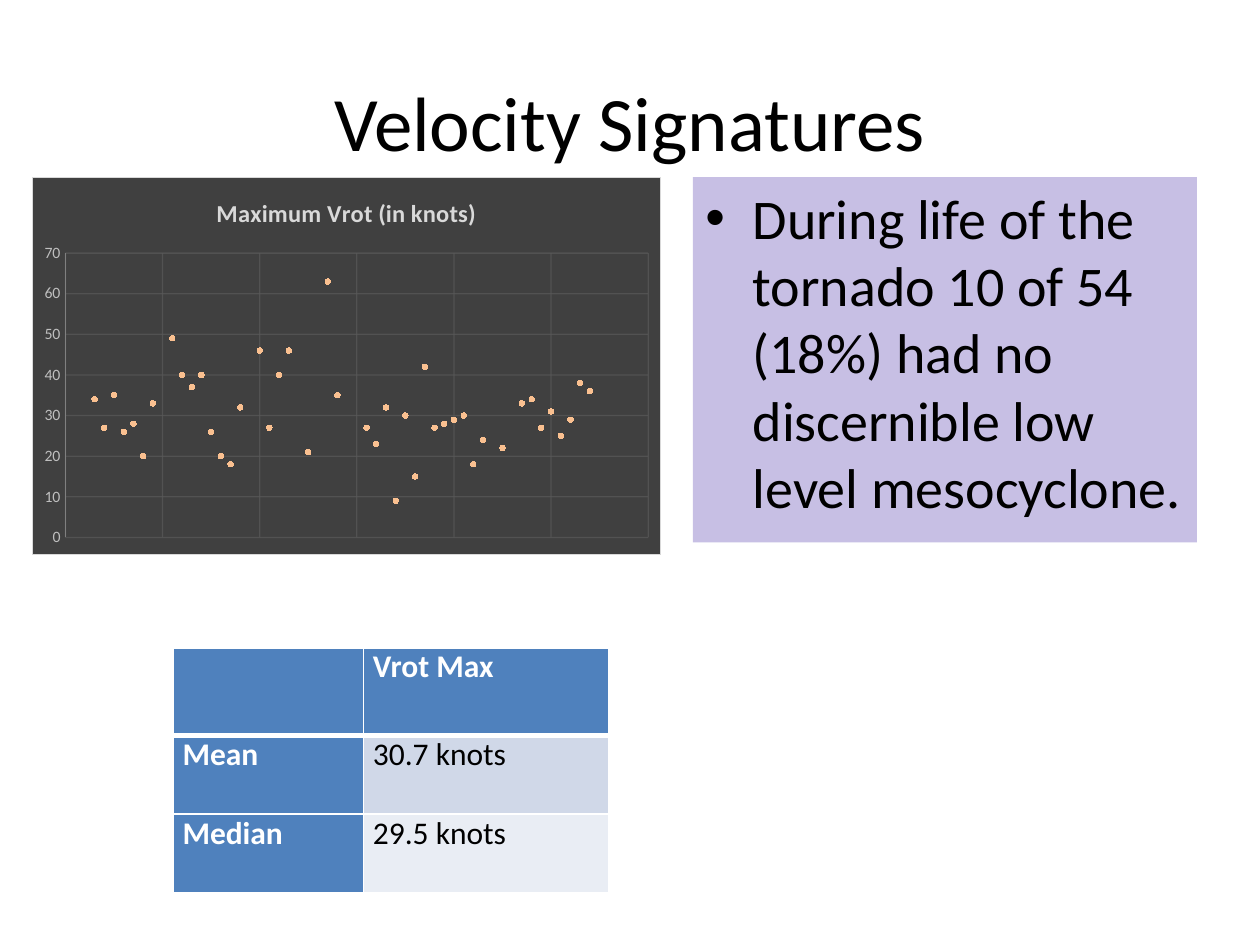
from dataclasses import dataclass

from lxml import etree
from pptx import Presentation, util as u
from pptx.chart import data
from pptx.dml import color
from pptx.enum import chart as kinds, shapes, text
from pptx.oxml import ns

Pt = u.Pt


@dataclass(frozen=True)
class Theme:
    """Colours and type sizes of the slide."""
    font: str = "Calibri"
    ink: str = "000000"
    white: str = "FFFFFF"
    note: str = "200096"
    header: str = "4F81BD"
    bands: tuple = ("D0D8E8", "E9EDF4")
    panel: str = "404040"
    panel_border: str = "D9D9D9"
    grid: str = "595959"
    axis: str = "808080"
    axis_text: str = "BFBFBF"
    marker: str = "FAC090"
    title_size: int = 44
    note_size: int = 32
    table_size: int = 18
    chart_title_size: int = 14
    chart_size: int = 10
    axis_size: int = 9


THEME = Theme()
VROT = [
    None, None, 34, 27, 35, 26, 28, 20, 33, None, 49, 40, 37, 40, 26, 20, 18, 32,
    None, 46, 27, 40, 46, None, 21, None, 63, 35, None, None, 27, 23, 32, 9, 30, 15,
    42, 27, 28, 29, 30, 18, 24, None, 22, None, 33, 34, 27, 31, 25, 29, 38, 36,
]
ROWS = [("", "Vrot Max"), ("Mean", "30.7 knots"), ("Median", "29.5 knots")]


def rgb(value):
    """Turn a hex string into a colour."""
    return color.RGBColor.from_string(value)


def add_element(parent, tag, **attributes):
    """Append an XML element with the given attributes."""
    return etree.SubElement(parent, ns.qn(tag), attributes)


def set_opacity(parent, percent):
    """Set the opacity of every RGB colour below an element."""
    for tint in parent.iter(ns.qn("a:srgbClr")):
        add_element(tint, "a:alpha", val=str(percent * 1000))


def set_font(font, size, ink, bold=False):
    """Format a font."""
    font.name, font.size, font.bold = THEME.font, Pt(size), bold
    font.color.rgb = rgb(ink)


def write(frame, words, size, ink=THEME.ink, bold=False, align=text.PP_ALIGN.LEFT,
          anchor=text.MSO_ANCHOR.TOP, bullet=None, indent=0):
    """Fill a text frame with one formatted paragraph."""
    frame.word_wrap = True
    frame.vertical_anchor = anchor
    paragraph = frame.paragraphs[0]
    paragraph.alignment = align
    if bullet:
        properties = paragraph._p.get_or_add_pPr()
        properties.set("marL", str(Pt(indent)))
        properties.set("indent", str(-Pt(indent)))
        add_element(properties, "a:buFont", typeface="Arial")
        add_element(properties, "a:buChar", char=bullet)
    run = paragraph.add_run()
    run.text = words
    set_font(run.font, size, ink, bold)


def place_title(slide, left, top, width, height):
    """Move and fill the title placeholder."""
    title = slide.shapes.title
    title.left, title.top, title.width, title.height = map(Pt, (left, top, width, height))
    write(title.text_frame, "Velocity Signatures", THEME.title_size,
          align=text.PP_ALIGN.CENTER, anchor=text.MSO_ANCHOR.MIDDLE)


def place_note(slide, left, top, width, height):
    """Place the tinted finding beside the chart."""
    note = slide.shapes.add_shape(shapes.MSO_SHAPE.RECTANGLE,
                                  *map(Pt, (left, top, width, height)))
    note.shadow.inherit = False
    note.fill.solid()
    note.fill.fore_color.rgb = rgb(THEME.note)
    set_opacity(note.element.spPr, 25)
    note.line.fill.background()
    write(note.text_frame,
          "During life of the tornado 10 of 54 (18%) had no discernible low level mesocyclone.",
          THEME.note_size, bullet="•", indent=27)


def style_panel(chart):
    """Fill the chart background and fix the plot area."""
    panel = etree.Element(ns.qn("c:spPr"))
    fill = add_element(panel, "a:solidFill")
    add_element(fill, "a:srgbClr", val=THEME.panel)
    border = add_element(panel, "a:ln", w=str(Pt(0.75)))
    add_element(add_element(border, "a:solidFill"), "a:srgbClr", val=THEME.panel_border)
    chart.element.find(ns.qn("c:txPr")).addprevious(panel)

    plot_area = chart.element.find(".//" + ns.qn("c:plotArea"))
    for old in plot_area.findall(ns.qn("c:layout")):
        plot_area.remove(old)
    layout = etree.Element(ns.qn("c:layout"))
    plot_area.insert(0, layout)
    manual = add_element(layout, "c:manualLayout")
    for tag, value in (("layoutTarget", "inner"), ("xMode", "edge"), ("yMode", "edge"),
                       ("x", "0.053"), ("y", "0.2"), ("w", "0.927"), ("h", "0.755")):
        add_element(manual, "c:" + tag, val=value)


def style_axes(chart):
    """Scale and colour both axes and their grids."""
    for axis, top in ((chart.category_axis, 60), (chart.value_axis, 70)):
        axis.minimum_scale, axis.maximum_scale, axis.major_unit = 0, top, 10
        axis.has_major_gridlines = True
        axis.major_tick_mark = axis.minor_tick_mark = kinds.XL_TICK_MARK.NONE
        grid = axis.major_gridlines.format.line
        grid.width = Pt(0.75)
        grid.color.rgb = rgb(THEME.grid)
    for grid in chart.element.iter(ns.qn("c:majorGridlines")):
        set_opacity(grid, 75)
    chart.category_axis.visible = False
    knots = chart.value_axis
    knots.format.line.width = Pt(0.75)
    knots.format.line.color.rgb = rgb(THEME.axis)
    set_font(knots.tick_labels.font, THEME.axis_size, THEME.axis_text)


def clear_missing(chart):
    """Leave tornadoes without a Vrot as blank points."""
    for point in list(chart.element.iter(ns.qn("c:pt"))):
        if point.findtext(ns.qn("c:v")) == "None":
            point.getparent().remove(point)


def place_chart(slide, left, top, width, height):
    """Place the scatter chart of maximum Vrot by tornado."""
    points = data.XyChartData()
    vrot = points.add_series("Series 1")
    for number, knots in enumerate(VROT, 1):
        vrot.add_data_point(number, knots)
    chart = slide.shapes.add_chart(kinds.XL_CHART_TYPE.XY_SCATTER,
                                   *map(Pt, (left, top, width, height)), points).chart
    clear_missing(chart)
    chart.has_legend = False
    set_font(chart.font, THEME.chart_size, THEME.ink)
    chart.has_title = True
    write(chart.chart_title.text_frame, "Maximum Vrot (in knots)", THEME.chart_title_size,
          THEME.panel_border, bold=True, align=text.PP_ALIGN.CENTER)
    style_panel(chart)
    style_axes(chart)
    plot = chart.plots[0]
    plot.vary_by_categories = False
    series = plot.series[0]
    series.format.line.fill.background()
    marker = series.marker
    marker.style, marker.size = kinds.XL_MARKER_STYLE.CIRCLE, 3
    marker.format.fill.solid()
    marker.format.fill.fore_color.rgb = rgb(THEME.marker)
    marker.format.line.color.rgb = rgb(THEME.marker)


def style_cell(cell, fill, widths):
    """Give a cell its margins, white borders and fill."""
    cell.margin_left = cell.margin_right = Pt(5.4)
    cell.margin_top = cell.margin_bottom = 0
    properties = cell._tc.get_or_add_tcPr()
    for side, width in zip("LRTB", widths):
        border = add_element(properties, "a:ln" + side, w=str(Pt(width)))
        add_element(add_element(border, "a:solidFill"), "a:srgbClr", val=THEME.white)
    cell.fill.solid()
    cell.fill.fore_color.rgb = rgb(fill)


def place_table(slide, left, top, width, height):
    """Place the table of mean and median Vrot."""
    table = slide.shapes.add_table(len(ROWS), 2, *map(Pt, (left, top, width, height))).table
    label_width, header_height = 108.8, 50.1
    table.columns[0].width, table.columns[1].width = Pt(label_width), Pt(width - label_width)
    for r, row in enumerate(ROWS):
        table.rows[r].height = Pt((height - header_height) / 2 if r else header_height)
        for c, words in enumerate(row):
            cell = table.cell(r, c)
            heading = r == 0 or c == 0
            style_cell(cell, THEME.header if heading else THEME.bands[r - 1],
                       (1, 1, 3 if r == 1 else 1, 3 if r == 0 else 1))
            if words:
                write(cell.text_frame, words, THEME.table_size,
                      THEME.white if heading else THEME.ink, bold=heading)


def main():
    """Build and save the slide."""
    deck = Presentation()
    deck.slide_width, deck.slide_height = Pt(720), Pt(540)
    slide = deck.slides.add_slide(deck.slide_layouts[5])
    place_title(slide, 36, 24, 648, 90)
    place_note(slide, 396, 101.25, 288, 208.8)
    place_chart(slide, 18, 101.25, 360, 216)
    place_table(slide, 98.9, 370.2, 249, 139.8)
    deck.save("out.pptx")


if __name__ == "__main__":
    main()
